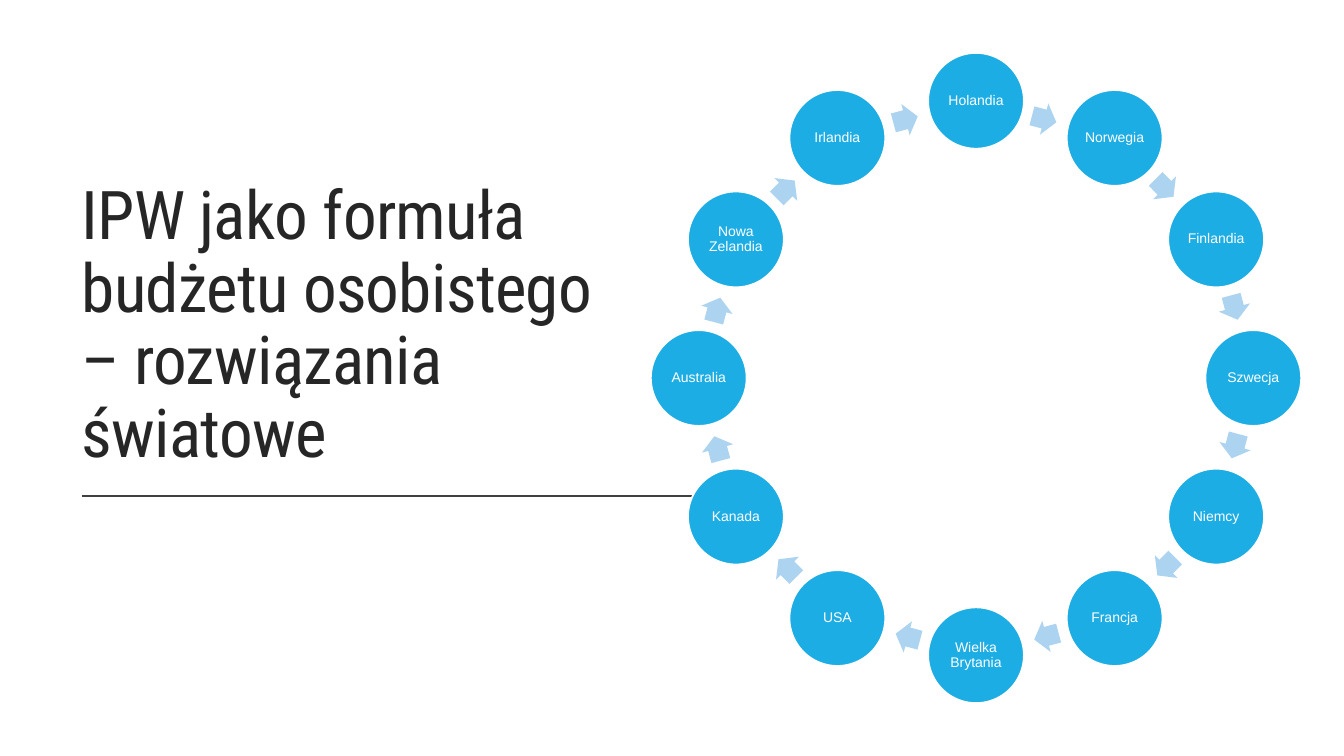
"""Build a title slide with a ring of countries that use personal budgets."""
from dataclasses import dataclass
from math import cos, radians, sin

from lxml.etree import SubElement
from pptx import Presentation
from pptx.dml.color import RGBColor
from pptx.enum.shapes import MSO_CONNECTOR, MSO_SHAPE
from pptx.enum.text import MSO_ANCHOR, MSO_AUTO_SIZE, PP_ALIGN
from pptx.oxml.ns import qn
from pptx.shapes.autoshape import Shape
from pptx.slide import Slide
from pptx.util import Emu, Pt

EMU_PER_PX = 9144
SLIDE_WIDTH, SLIDE_HEIGHT = 1333, 750
RING_X, RING_Y, RING_RADIUS = 968, 375, 275
CIRCLE_SIZE = 95
ARROW_WIDTH, ARROW_HEIGHT = 25, 32
ARROW_LAG = 0.25

WHITE = RGBColor(0xFF, 0xFF, 0xFF)
INK = RGBColor(0x26, 0x26, 0x26)
RULE_GREY = RGBColor(0x40, 0x40, 0x40)
BLUE = RGBColor(0x1C, 0xAD, 0xE4)
PALE_BLUE = RGBColor(0xAC, 0xD3, 0xEF)

TITLE = "IPW jako formuła budżetu osobistego – rozwiązania światowe"
COUNTRIES = (
    "Holandia", "Norwegia", "Finlandia", "Szwecja", "Niemcy", "Francja",
    "Wielka Brytania", "USA", "Kanada", "Australia", "Nowa Zelandia", "Irlandia",
)


@dataclass(frozen=True)
class Stop:
    country: str
    angle: float
    arrow_turn: float


def px(length: float) -> Emu:
    return Emu(round(length * EMU_PER_PX))


def add_on_ring(slide: Slide, kind: MSO_SHAPE, angle: float, radius: float,
                width: int, height: int, fill: RGBColor) -> Shape:
    x = RING_X + radius * sin(radians(angle))
    y = RING_Y - radius * cos(radians(angle))
    shape = slide.shapes.add_shape(
        kind, px(x - width / 2), px(y - height / 2), px(width), px(height))
    shape.shadow.inherit = False
    shape.fill.solid()
    shape.fill.fore_color.rgb = fill
    return shape


def add_country(slide: Slide, stop: Stop) -> None:
    circle = add_on_ring(slide, MSO_SHAPE.OVAL, stop.angle, RING_RADIUS,
                         CIRCLE_SIZE, CIRCLE_SIZE, BLUE)
    circle.line.color.rgb = WHITE
    circle.line.width = Pt(1.25)
    frame = circle.text_frame
    frame.margin_left = frame.margin_right = px(1)
    frame.margin_top = frame.margin_bottom = px(1)
    frame.vertical_anchor = MSO_ANCHOR.MIDDLE
    frame.word_wrap = True
    frame.text = stop.country
    label = frame.paragraphs[0]
    label.alignment = PP_ALIGN.CENTER
    label.line_spacing = 0.9
    font = label.runs[0].font
    font.name, font.size = "Arial", Pt(10)
    font.color.rgb = WHITE


def add_arrow(slide: Slide, stop: Stop) -> None:
    half_step = stop.arrow_turn - stop.angle
    arrow = add_on_ring(slide, MSO_SHAPE.RIGHT_ARROW, stop.arrow_turn - ARROW_LAG,
                        RING_RADIUS * cos(radians(half_step)),
                        ARROW_WIDTH, ARROW_HEIGHT, PALE_BLUE)
    arrow.line.fill.background()
    arrow.adjustments[0], arrow.adjustments[1] = 0.6, 0.5
    arrow.rotation = stop.arrow_turn


def set_title(slide: Slide) -> None:
    title = slide.shapes.title
    title.left, title.top, title.width, title.height = map(px, (71, 70, 563, 403))
    frame = title.text_frame
    frame.text = TITLE
    frame.word_wrap = True
    frame.auto_size = MSO_AUTO_SIZE.NONE
    frame.vertical_anchor = MSO_ANCHOR.BOTTOM
    heading = frame.paragraphs[0]
    heading.alignment = PP_ALIGN.LEFT
    heading.line_spacing = 0.9
    run = heading.runs[0]
    run.font.name, run.font.size = "Roboto Condensed", Pt(48)
    run.font.color.rgb = INK
    run.font._element.set("spc", "-50")


def add_title_rule(slide: Slide) -> None:
    rule = slide.shapes.add_connector(
        MSO_CONNECTOR.STRAIGHT, px(81), px(492), px(698), px(492))
    rule.line.color.rgb = RULE_GREY
    rule.line.width = Pt(1)
    SubElement(rule._element.spPr, qn("a:effectLst"))


def main() -> None:
    deck = Presentation()
    deck.slide_width, deck.slide_height = px(SLIDE_WIDTH), px(SLIDE_HEIGHT)
    slide = deck.slides.add_slide(deck.slide_layouts.get_by_name("Title Only"))
    set_title(slide)
    add_title_rule(slide)
    step = 360 / len(COUNTRIES)
    for position, country in enumerate(COUNTRIES):
        stop = Stop(country, position * step, (position + 0.5) * step)
        add_country(slide, stop)
        add_arrow(slide, stop)
    deck.save("out.pptx")


if __name__ == "__main__":
    main()
